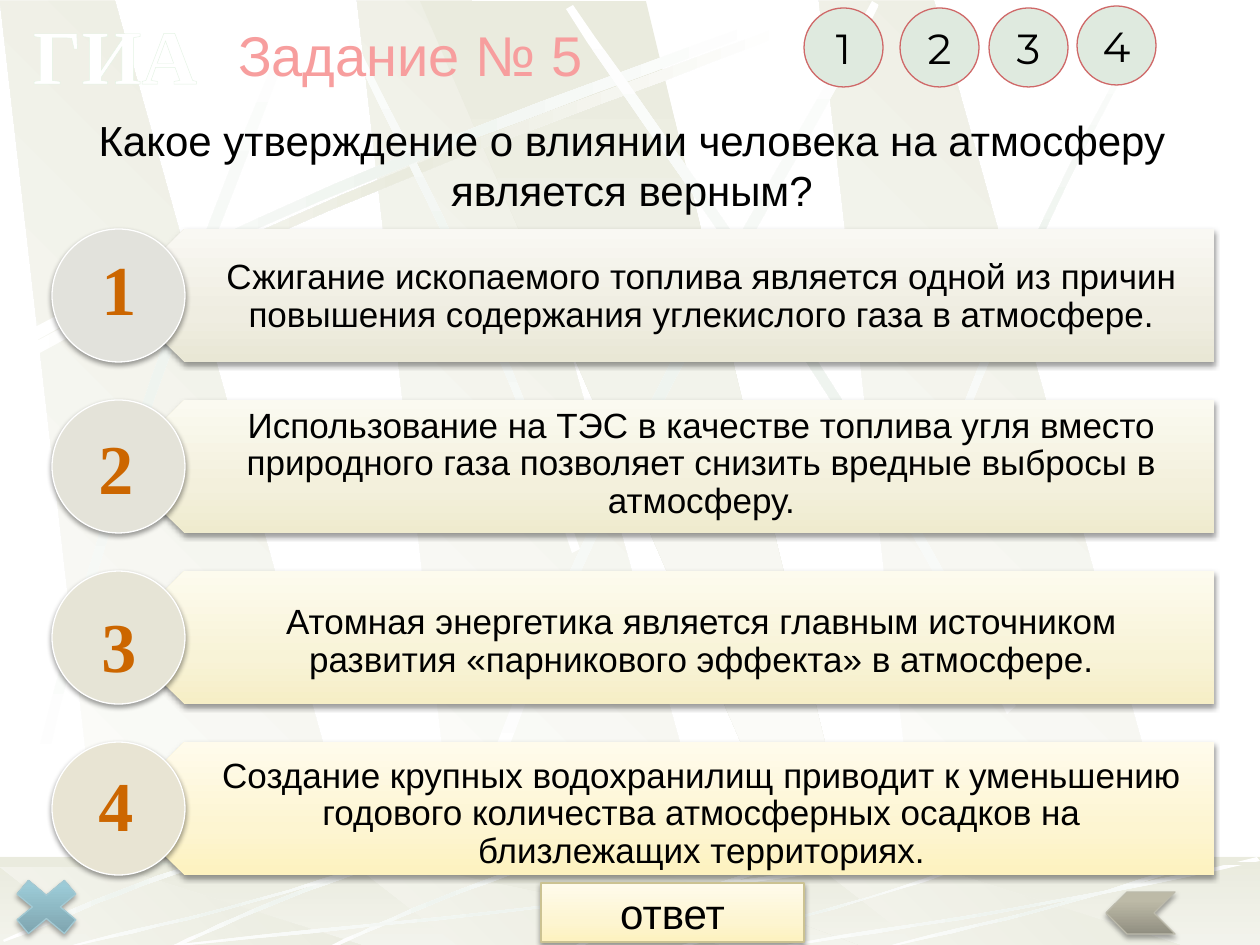
"""Builds a quiz slide with four numbered statements and an answer button."""
from dataclasses import dataclass

from pptx import Presentation
from pptx import util as u
from pptx.dml import color
from pptx.enum import shapes, text
from pptx.oxml import ns, parse_xml

SCALE = 914400 / 126
KIND = shapes.MSO_SHAPE
MIDDLE = text.MSO_ANCHOR.MIDDLE
TOP = text.MSO_ANCHOR.TOP


@dataclass(frozen=True)
class Theme:
    sans: str = "Arial"
    serif: str = "Times New Roman"
    badge_font: str = "Montserrat"
    black: str = "000000"
    white: str = "FFFFFF"
    sand: str = "EAEBDE"
    mist: str = "EFF4EF"
    mint: str = "DFEADF"
    rose: str = "CF6868"
    title_color: str = "F79E9E"
    digit_color: str = "CC6600"
    logo_line: str = "E4F3E4"
    button_line: str = "CBC292"
    close_line: str = "A3C9D3"
    back_line: str = "BCBAAB"
    close_fill: tuple = ((0, "789CA6"), (80, "9CCBD7"), (100, "9CCCD9"))
    back_fill: tuple = ((0, "918F81"), (80, "BDBAA7"), (100, "BEBBA7"))
    answer_fill: tuple = ((0, "FDF2BF"), (35, "FDF5D1"), (100, "FFFBEC"))
    statement_size: int = 20
    body_size: int = 24
    title_size: int = 32
    digit_size: int = 40
    logo_size: int = 44


STREAKS = [
    (25, 347, 358, 169, 660, 74, 789, 23, 793, 30, 665, 87, 320, 190, 29, 359),
    (580, 549, 493, 295, 381, 97, 339, 6, 334, 9, 372, 100, 501, 325, 572, 553),
    (18, 336, 350, 158, 653, 64, 781, 13, 785, 20, 658, 77, 312, 180, 21, 349),
    (29, 788, 117, 421, 248, 132, 296, 3, 304, 5, 261, 137, 108, 464, 40, 793),
    (485, 774, 627, 403, 804, 129, 872, 1, 879, 5, 818, 136, 612, 447, 496, 782),
    (1016, 706, 844, 369, 650, 120, 573, 5, 566, 9, 639, 127, 863, 410, 1007, 714),
    (930, 496, 1026, 218, 1119, 83, 1155, 0, 1168, 0, 1053, 183, 969, 406, 937, 500),
]
FOOTER_STREAKS = [
    (790, 859, 677, 893, 601, 935, 564, 950, 571, 951, 617, 930, 719, 882, 791, 863),
    (557, 857, 447, 888, 362, 932, 323, 949, 324, 951, 363, 936, 460, 886, 559, 861),
    (399, 857, 290, 888, 204, 932, 165, 949, 166, 951, 205, 936, 302, 886, 402, 861),
    (234, 853, 125, 882, 42, 923, 3, 940, 4, 942, 43, 930, 139, 879, 237, 857),
    (903, 861, 566, 911, 260, 937, 130, 951, 126, 950, 255, 934, 605, 905, 900, 857),
    (388, 861, 243, 911, 111, 937, 54, 951, 53, 950, 108, 934, 260, 905, 387, 857),
    (955, 871, 829, 915, 714, 939, 665, 951, 664, 950, 712, 937, 843, 910, 954, 868),
    (1207, 861, 1062, 911, 930, 937, 873, 951, 872, 950, 927, 934, 1079, 905, 1206, 857),
    (1260, 861, 1042, 911, 843, 937, 759, 951, 756, 950, 839, 934, 1066, 905, 1257, 857),
]
STATEMENTS = [
    ("Сжигание ископаемого топлива является одной из причин повышения содержания "
     "углекислого газа в атмосфере.", ("E9E7D5", "EFEDE1", "F9F8F3"), "E2E2DC", 2, (89, 239)),
    ("Использование на ТЭС в качестве топлива угля вместо природного газа позволяет "
     "снизить вредные выбросы в атмосферу.", ("EFEBCE", "F3F0DC", "FBFAF1"), "E4E3D9", -2, (86, 418)),
    ("Атомная энергетика является главным источником развития «парникового эффекта» "
     "в атмосфере.", ("F6EEC6", "F8F3D7", "FDFBEE"), "E6E4D6", 5, (89, 596)),
    ("Создание крупных водохранилищ приводит к уменьшению годового количества "
     "атмосферных осадков на близлежащих территориях.",
     ("FDF2BF", "FDF5D1", "FFFBEC"), "E8E4D3", 6, (86, 755)),
]


def px(length):
    return u.Emu(round(length * SCALE))


def curve(points):
    start, first, second, end = points
    for step in range(13):
        t = step / 12
        yield tuple((1 - t) ** 3 * a + 3 * (1 - t) ** 2 * t * b + 3 * (1 - t) * t * t * c + t ** 3 * d
                    for a, b, c, d in zip(start, first, second, end))


class Page:
    def __init__(self, slide, theme):
        self.slide = slide
        self.theme = theme

    def paint(self, shape, fill, angle=270, line=None, shadow=None):
        shape.shadow.inherit = False
        properties = shape.element.spPr
        if isinstance(fill, str):
            shape.fill.solid()
            shape.fill.fore_color.rgb = color.RGBColor.from_string(fill)
        else:
            shape.fill.gradient()
            shape.fill.gradient_angle = (360 - angle) % 360
            stops = properties.find(".//" + ns.qn("a:gsLst"))
            stops.clear()
            for position, tint in fill:
                stops.append(parse_xml(f'<a:gs {ns.nsdecls("a")} pos="{position * 1000}">'
                                       f'<a:srgbClr val="{tint}"/></a:gs>'))
        if line:
            shape.line.color.rgb = color.RGBColor.from_string(line)
            shape.line.width = u.Pt(0.75)
        else:
            shape.line.fill.background()
        if shadow:
            properties.find(ns.qn("a:effectLst")).append(parse_xml(
                f'<a:outerShdw {ns.nsdecls("a")} blurRad="39370" dist="{u.Pt(shadow[1])}" dir="5400000" '
                f'rotWithShape="0"><a:srgbClr val="{self.theme.black}">'
                f'<a:alpha val="{shadow[0] * 1000}"/></a:srgbClr></a:outerShdw>'))
        return shape

    def preset(self, kind, frame, fill, flip=False, **look):
        shape = self.slide.shapes.add_shape(kind, *map(px, frame))
        if flip:
            shape.element.spPr.find(ns.qn("a:xfrm")).set("flipH", "1")
        return self.paint(shape, fill, **look)

    def outline(self, points, fill, angle):
        builder = self.slide.shapes.build_freeform(*points[0], scale=SCALE)
        builder.add_line_segments(points[1:], close=True)
        self.paint(builder.convert_to_shape(), fill, angle)

    def bands(self, top, bottom):
        sand, white = self.theme.sand, self.theme.white
        for left in (357, 0, 819):
            self.outline([(left + 108, bottom), (left + 380, bottom), (left + 115, top), (left, top)],
                         ((0, white), (100, sand)), 315)
        self.outline([(420, top), (829, bottom), (874, bottom), (646, top)],
                     ((0, sand), (100, white)), 90)

    def streak(self, numbers, tint):
        points = list(zip(numbers[::2], numbers[1::2]))
        tall = abs(points[3][1] - points[0][1]) > abs(points[3][0] - points[0][0])
        fill = ((0, self.theme.white), (50, tint), (100, self.theme.white))
        self.outline([*curve(points[:4]), *curve(points[4:])], fill, 90 if tall else 0)

    def set_text(self, box, lines, size, font=None, tint=None, bold=False, wrap=True,
                 anchor=TOP, align=text.PP_ALIGN.CENTER, spacing=None):
        frame = box.text_frame
        frame.text = "\n".join(lines)
        frame.word_wrap = wrap
        frame.vertical_anchor = anchor
        for para in frame.paragraphs:
            para.alignment = align
            para.line_spacing = spacing
            para.font.name = font or self.theme.sans
            para.font.size = u.Pt(size)
            para.font.bold = bold
            para.font.color.rgb = color.RGBColor.from_string(tint or self.theme.black)
        return frame

    def label(self, frame, lines, size, **style):
        box = self.slide.shapes.add_textbox(*map(px, frame))
        return self.set_text(box, lines, size, **style)

    def title(self, frame, words):
        box = self.slide.shapes.title
        box.element.getparent().append(box.element)
        box.left, box.top, box.width, box.height = map(px, frame)
        self.set_text(box, [words], self.theme.title_size, tint=self.theme.title_color)

    def logo(self, frame, words):
        para = self.label(frame, [words], self.theme.logo_size, font=self.theme.serif,
                          tint=self.theme.white, bold=True, wrap=False).paragraphs[0]
        para.runs[0]._r.get_or_add_rPr().insert(0, parse_xml(
            f'<a:ln {ns.nsdecls("a")} w="{u.Pt(2.48)}"><a:solidFill>'
            f'<a:srgbClr val="{self.theme.logo_line}"/></a:solidFill></a:ln>'))

    def background(self):
        sand, white = self.theme.sand, self.theme.white
        self.bands(1, 946)
        for index, numbers in enumerate(STREAKS):
            self.streak(numbers, self.theme.mist if index else sand)
        self.preset(KIND.RECTANGLE, (0, 857, 1260, 95), ((0, sand), (100, white)), angle=90)
        self.bands(867, 951)
        veil = self.preset(KIND.RECTANGLE, (0, 857, 1260, 95), sand)
        veil.element.spPr.find(".//" + ns.qn("a:srgbClr")).append(
            parse_xml(f'<a:alpha {ns.nsdecls("a")} val="50000"/>'))
        for numbers in FOOTER_STREAKS:
            self.streak(numbers, self.theme.mist)
        self.preset(KIND.RECTANGLE, (0, 862, 1260, 3),
                    ((0, sand), (50, self.theme.mint), (100, sand)), angle=0)

    def statement(self, number, words, tints, disc, shift, digit_at):
        top = 229 + 171 * (number - 1)
        self.preset(KIND.PENTAGON, (118, top, 1096, 133), tuple(zip((0, 35, 100), tints)),
                    flip=True, shadow=(38, 1.6))
        frame = self.label((151, top + shift, 1063, 133), [words], self.theme.statement_size,
                           anchor=MIDDLE, spacing=0.9)
        frame.margin_left, frame.margin_right = px(58), px(20)
        self.preset(KIND.OVAL, (52, top, 133, 133), disc, line=self.theme.white, shadow=(38, 1.6))
        self.label((*digit_at, 59, 97), [str(number)], self.theme.digit_size, font=self.theme.serif,
                   tint=self.theme.digit_color, bold=True, align=text.PP_ALIGN.LEFT)

    def badge(self, number, left, top):
        disc = self.preset(KIND.OVAL, (left, top, 79, 79), self.theme.mint, line=self.theme.rose)
        self.set_text(disc, [str(number)], self.theme.body_size, font=self.theme.badge_font,
                      wrap=False, anchor=MIDDLE)


def main():
    deck = Presentation()
    deck.slide_width, deck.slide_height = px(1260), px(945)
    theme = Theme()
    page = Page(deck.slides.add_slide(deck.slide_layouts[5]), theme)
    page.background()
    page.preset(KIND.MATH_MULTIPLY, (1, 869, 91, 76), theme.close_fill,
                line=theme.close_line, shadow=(35, 1.8))
    page.preset(KIND.CHEVRON, (1106, 892, 69, 42), theme.back_fill, flip=True,
                line=theme.back_line, shadow=(35, 1.8))
    page.title((210, 14, 401, 81), "Задание № 5")
    for number, row in enumerate(STATEMENTS, 1):
        page.statement(number, *row)
    button = page.preset(KIND.FLOWCHART_PROCESS, (541, 883, 263, 59), theme.answer_fill,
                         line=theme.button_line, shadow=(38, 1.6))
    page.set_text(button, ["ответ"], theme.body_size, wrap=False, anchor=MIDDLE)
    page.logo((19, 1, 192, 106), "ГИА")
    page.label((19, 108, 1226, 115), ["Какое утверждение о влиянии человека на атмосферу",
                                      "является верным?"], theme.body_size)
    for number, (left, top) in enumerate([(804, 8), (900, 8), (989, 8), (1077, 6)], 1):
        page.badge(number, left, top)
    deck.save("out.pptx")


if __name__ == "__main__":
    main()
